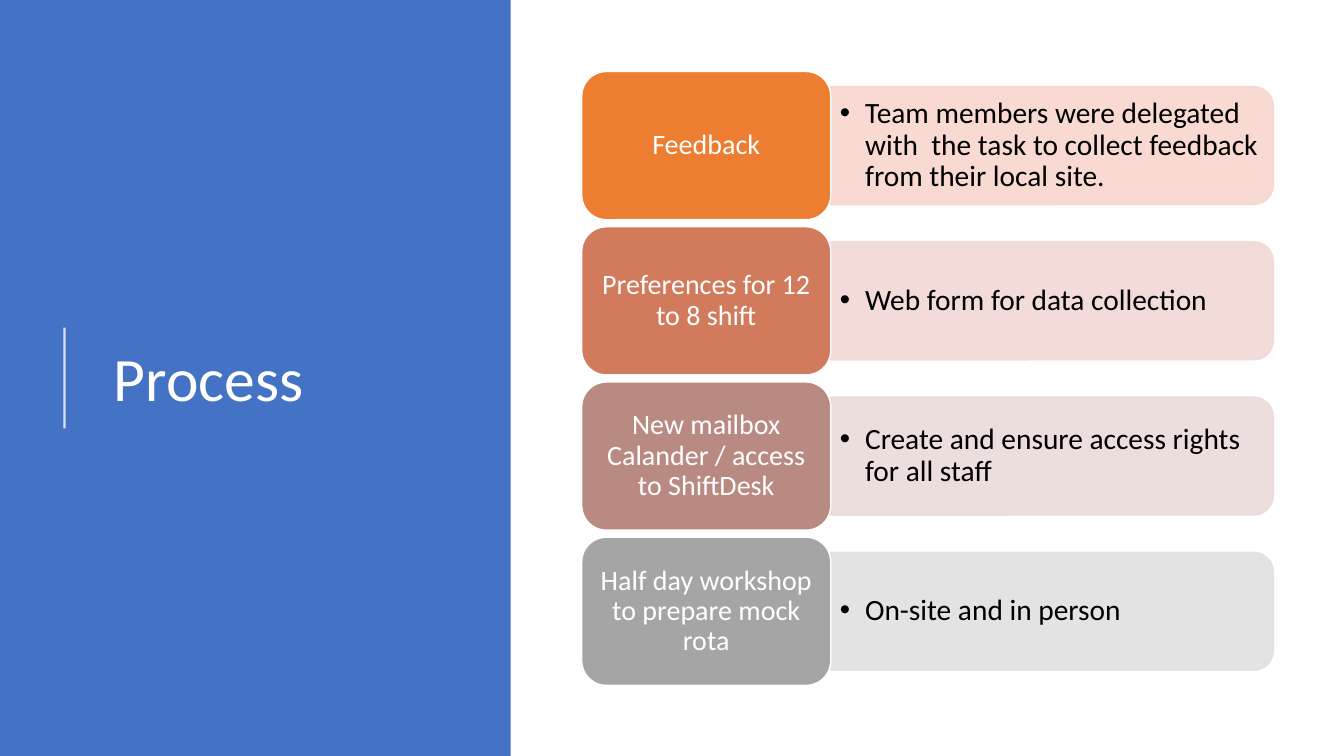
from lxml.etree import SubElement
from pptx import Presentation
from pptx.dml.color import RGBColor
from pptx.enum.shapes import MSO_CONNECTOR, MSO_SHAPE as SHAPE
from pptx.enum.text import MSO_ANCHOR, PP_ALIGN as ALIGN
from pptx.oxml.ns import qn
from pptx.util import Inches, Pt

TITLE = "Process"
STEPS = [  # heading, detail, card colour, bar colour
    ("Feedback",
     "Team members were delegated with\u00a0 the task to collect feedback from their local site.",
     "ED7D31", "F8D7CE"),
    ("Preferences for 12 to 8 shift", "Web form for data collection", "D17B5C", "F1D8D4"),
    ("New mailbox Calander / access to ShiftDesk",
     "Create and ensure access rights for all staff", "B98A82", "E9DBDA"),
    ("Half day workshop to prepare mock rota", "On-site and in person", "A5A5A5", "E1E1E1"),
]
FONT, WHITE, BLACK, BLUE = "Calibri", "FFFFFF", "000000", "4472C4"
WIDTH, HEIGHT = 13.33, 7.5
PANEL_W = 0.38 * WIDTH
CARD_X, CARD_W, CARD_H = 5.77, 2.47, 1.47
BAR_X, BAR_W, BAR_H = CARD_X + CARD_W, 4.39, 1.17
TEXT_W, TEXT_H = 4.33, 1.06
TOP, PITCH = 0.71, 1.54


def box(*lengths):
    return [Inches(v) for v in lengths]


def paint(fmt, color, alpha=None):
    """Give a fill a solid colour, with opacity in percent."""
    fmt.solid()
    fmt.fore_color.rgb = RGBColor.from_string(color)
    if alpha:
        for clr in fmt._xPr.iter(qn("a:srgbClr")):
            SubElement(clr, qn("a:alpha"), val=str(alpha * 1000))


def add_block(kind, place, fill, line=None, alpha=None):
    sp = s.shapes.add_shape(kind, *box(*place))
    sp.shadow.inherit = False
    paint(sp.fill, fill, alpha)
    if line:
        sp.line.width = Pt(1)
        paint(sp.line.fill, line, alpha)
    else:
        sp.line.fill.background()
    return sp


def write(sp, text, size, color, align, margins):
    tf = sp.text_frame
    sides = ("margin_left", "margin_top", "margin_right", "margin_bottom")
    settings = dict(zip(sides, box(*margins)), word_wrap=True,
                    vertical_anchor=MSO_ANCHOR.MIDDLE)
    for name, value in settings.items():
        setattr(tf, name, value)
    p = tf.paragraphs[0]
    p.alignment, p.line_spacing = align, 0.9
    r = p.add_run()
    r.text = text
    r.font.name, r.font.size = FONT, Pt(size)
    r.font.color.rgb = RGBColor.from_string(color)
    return p


def add_bullet(p, indent):
    pPr = p._p.get_or_add_pPr()
    pPr.set("marL", str(Inches(indent)))
    pPr.set("indent", str(-Inches(indent)))
    SubElement(pPr, qn("a:buFont"), typeface="Arial")
    SubElement(pPr, qn("a:buChar"), char="•")


prs = Presentation()
prs.slide_width, prs.slide_height = box(WIDTH, HEIGHT)
s = prs.slides.add_slide(prs.slide_layouts[5])

title = s.shapes.title
title.left, title.top, title.width, title.height = box(1.03, 0.78, 3.69, 6.02)
write(title, TITLE, 44, WHITE, ALIGN.LEFT, (0.1, 0.05, 0.1, 0.05))
panel = add_block(SHAPE.RECTANGLE, (0, 0, PANEL_W, HEIGHT), BLUE)
title.element.addprevious(panel.element)

rule = s.shapes.add_connector(MSO_CONNECTOR.STRAIGHT, *box(0.64, 4.25, 0.64, 3.25))
rule.line.width = Pt(1.5)
paint(rule.line.fill, WHITE, 80)
SubElement(rule.element.spPr, qn("a:effectLst"))

for i, (heading, detail, card_color, bar_color) in enumerate(STEPS):
    top = TOP + i * PITCH
    middle = top + CARD_H / 2
    # The bar is a tall tab turned a quarter, so that its round corners face right
    bar = add_block(SHAPE.ROUND_2_SAME_RECTANGLE,
                    (BAR_X + (BAR_W - BAR_H) / 2, middle - BAR_W / 2, BAR_H, BAR_W),
                    bar_color, bar_color, 90)
    bar.rotation = 90
    note = s.shapes.add_textbox(*box(BAR_X, middle - TEXT_H / 2, TEXT_W, TEXT_H))
    add_bullet(write(note, detail, 21, BLACK, ALIGN.LEFT, (0.09, 0.04, 0.09, 0.04)), 0.25)
    card = add_block(SHAPE.ROUNDED_RECTANGLE, (CARD_X, top, CARD_W, CARD_H), card_color, WHITE)
    write(card, heading, 20, WHITE, ALIGN.CENTER, (0.08, 0.04, 0.08, 0.04))

prs.save("out.pptx")
